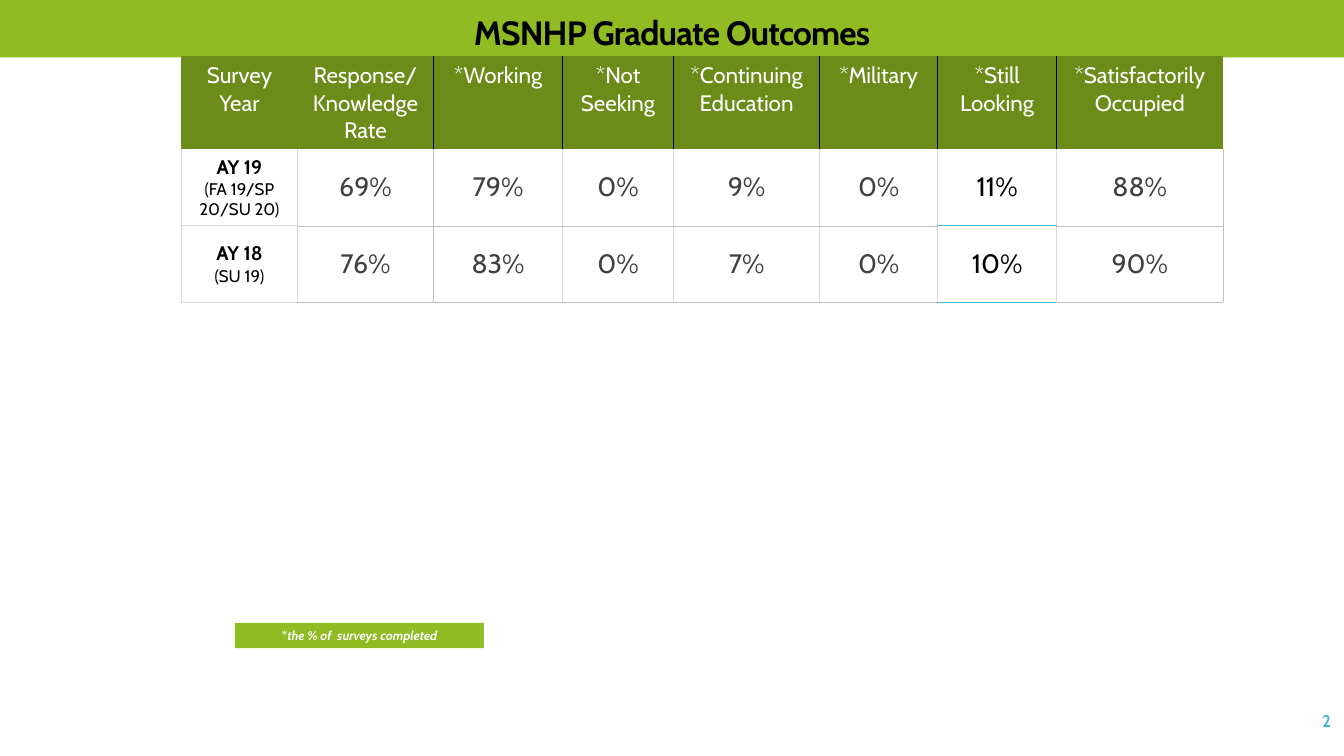
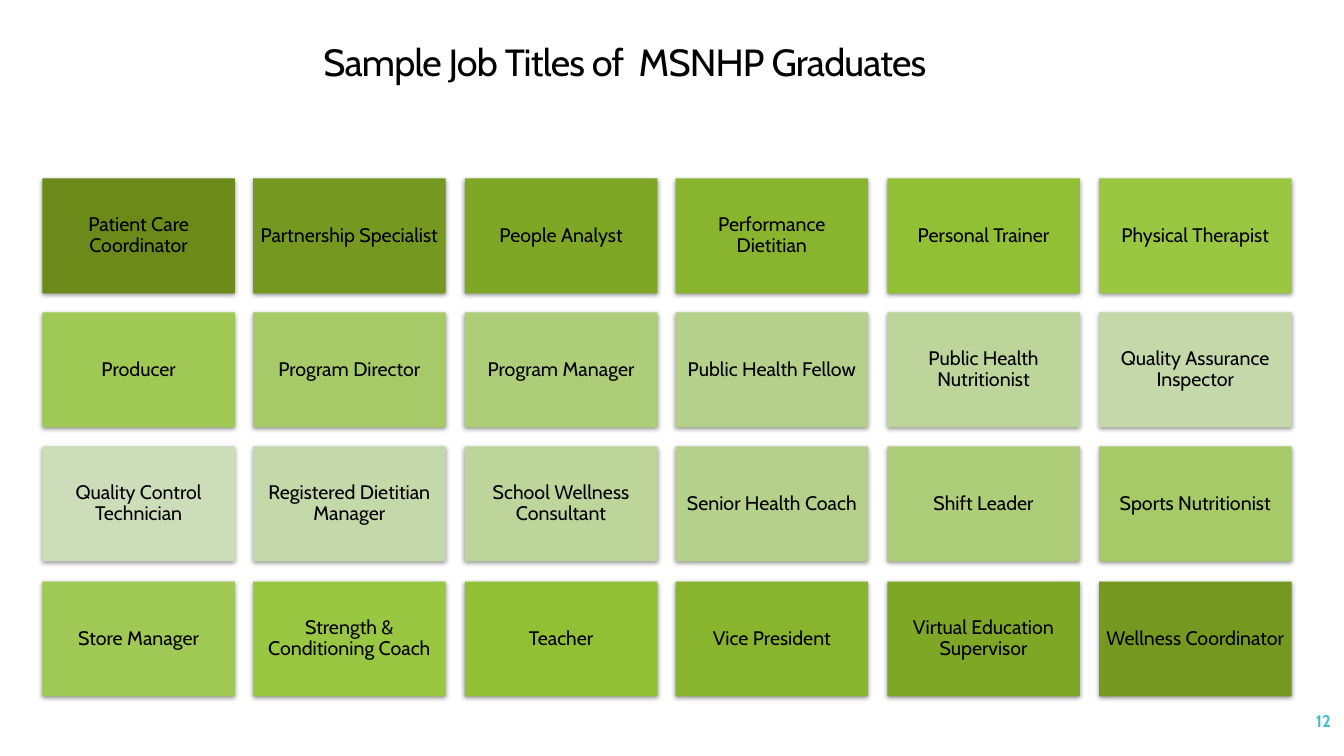
"""Build two slides on graduate outcomes and job titles."""
from lxml.etree import SubElement as Sub
from pptx import Presentation
from pptx.dml.color import RGBColor as Rgb
from pptx.enum.shapes import MSO_SHAPE as Form
from pptx.enum.text import MSO_ANCHOR as Anchor, PP_ALIGN as Align
from pptx.oxml.ns import qn
from pptx.util import Pt

SCALE = 9144
FONT = "Cabin"
INK = {
    "black": "000000", "white": "FFFFFF", "green": "90BB23",
    "head": "6C8C1A", "grey": "404040", "pale": "D9D9D9",
    "mid": "BFBFBF", "blue": "40BAD2",
}
SHADES = [
    "6B8A1A", "759920", "7FA726", "89B42D", "92C035", "9AC742", "A0C855",
    "A6CA67", "ADCD79", "B5D08A", "BDD49A", "C5D8AA", "CEDDB9",
]
WIDTHS = [115, 135, 128, 110, 145, 117, 118, 165]
HEIGHTS = [92, 76, 76]
HEADS = [
    ["Survey Year"], ["Response/", "Knowledge", "Rate"], ["*Working"],
    ["*Not Seeking"], ["*Continuing Education"], ["*Military"],
    ["*Still Looking"], ["*Satisfactorily", "Occupied"],
]
YEARS = [
    ("AY 19", "(FA 19/SP 20/SU 20)",
     ["69%", "79%", "0%", "9%", "0%", "11%", "88%"]),
    ("AY 18", "(SU 19)",
     ["76%", "83%", "0%", "7%", "0%", "10%", "90%"]),
]
STILL = 6
JOBS = [
    "Patient Care Coordinator", "Partnership Specialist", "People Analyst",
    "Performance Dietitian", "Personal Trainer", "Physical Therapist",
    "Producer", "Program Director", "Program Manager",
    "Public Health Fellow", "Public Health Nutritionist",
    "Quality Assurance Inspector", "Quality Control Technician",
    "Registered Dietitian Manager", "School Wellness Consultant",
    "Senior Health Coach", "Shift Leader", "Sports Nutritionist",
    "Store Manager", "Strength & Conditioning Coach", "Teacher",
    "Vice President", "Virtual Education Supervisor", "Wellness Coordinator",
]


def px(*nums):
    """Turn px into EMU."""
    return [num * SCALE for num in nums]


def tint(fill, code):
    """Set a solid fill."""
    fill.solid()
    fill.fore_color.rgb = Rgb.from_string(code)


def write(frame, *lines, align=Align.CENTER, lead=None, **base):
    """Fill a frame with lines, each a string or a list of (text, format)."""
    frame.word_wrap = True
    for at, line in enumerate(lines):
        para = frame.add_paragraph() if at else frame.paragraphs[0]
        para.alignment = align
        if lead:
            para.line_spacing = lead
        for words, more in [(line, {})] if isinstance(line, str) else line:
            look = {**base, **more}
            run = para.add_run()
            run.text = words
            font = run.font
            font.name, font.size = FONT, Pt(look["size"])
            font.bold = look.get("bold", False)
            font.italic = look.get("ital", False)
            font.color.rgb = Rgb.from_string(INK[look.get("ink", "black")])
            if "track" in look:
                run._r.get_or_add_rPr().set("spc", str(look["track"]))


def block(slide, area, code):
    """Add a plain filled rectangle."""
    shape = slide.shapes.add_shape(Form.RECTANGLE, *px(*area))
    shape.shadow.inherit = False
    tint(shape.fill, code)
    shape.line.fill.background()
    return shape


def label(slide, area):
    """Add a text box and return its frame."""
    frame = slide.shapes.add_textbox(*px(*area)).text_frame
    frame.vertical_anchor = Anchor.MIDDLE
    return frame


def title(frame, words, size, bold=False):
    """Write a slide title."""
    write(frame, words, size=size, bold=bold, lead=0.9, track=-60)


def page(deck, num):
    """Add a blank slide with its number."""
    slide = deck.slides.add_slide(deck.slide_layouts[6])
    write(label(slide, (1163, 695, 167, 40)), num, align=Align.RIGHT,
          size=12, ink="blue", bold=True)
    return slide


def shade(shape):
    """Give a shape a soft drop shadow."""
    props = shape._element.spPr
    glow = Sub(props.find(qn("a:effectLst")), qn("a:outerShdw"),
               blurRad=str(Pt(3.5)), dist=str(Pt(1.1)), dir="5400000",
               algn="ctr", rotWithShape="0")
    tone = Sub(glow, qn("a:srgbClr"), val=INK["black"])
    Sub(tone, qn("a:alpha"), val="45000")


def edge(cell, **sides):
    """Draw the sides L, R, T and B of a cell, each an ink and a width."""
    props = cell._tc.get_or_add_tcPr()
    for side in "LRTB":
        ink, wide = sides.get(side) or (None, 0)
        line = Sub(props, qn("a:ln" + side), w=str(Pt(wide)))
        if ink:
            fill = Sub(line, qn("a:solidFill"))
            Sub(fill, qn("a:srgbClr"), val=INK[ink])
        else:
            Sub(line, qn("a:noFill"))


def wall(row, col):
    """Give the upright line to the left of a column."""
    if row == 0:
        return ("black", 1) if 2 <= col < len(WIDTHS) else None
    return ("mid", 0.25) if col in (2, len(WIDTHS)) else ("pale", 1)


def floor(row, col):
    """Give the level line under a row."""
    if row == 0:
        return None
    return {0: ("pale", 1), STILL: ("blue", 1)}.get(col, ("mid", 0.25))


def fill_cell(cell, row, col):
    """Write and style one table cell."""
    edge(cell, L=wall(row, col), R=wall(row, col + 1),
         T=floor(row - 1, col) if row else None, B=floor(row, col))
    tint(cell.fill, INK["white" if row else "head"])
    cell.margin_left, cell.margin_right = px(12, 12)
    cell.margin_top, cell.margin_bottom = px(6, 6)
    cell.vertical_anchor = Anchor.MIDDLE if row else Anchor.TOP
    frame = cell.text_frame
    if row == 0:
        write(frame, *HEADS[col], size=16, ink="white")
        return
    year, term, rates = YEARS[row - 1]
    if col == 0:
        write(frame, [(year, {"size": 14, "bold": True})], term, size=12)
    else:
        write(frame, rates[col - 1], size=19,
              ink="black" if col == STILL else "grey")


def grid(slide):
    """Add the table of outcomes."""
    area = px(180, 56, sum(WIDTHS), sum(HEIGHTS))
    table = slide.shapes.add_table(len(HEIGHTS), len(WIDTHS), *area).table
    table.horz_banding = False
    for col, wide in zip(table.columns, px(*WIDTHS)):
        col.width = wide
    for row, tall in zip(table.rows, px(*HEIGHTS)):
        row.height = tall
    for row in range(len(HEIGHTS)):
        for col in range(len(WIDTHS)):
            fill_cell(table.cell(row, col), row, col)


def results(deck):
    """Build the slide of outcomes."""
    slide = page(deck, "2")
    band = block(slide, (0, 0, 1333, 57), INK["green"]).text_frame
    band.vertical_anchor = Anchor.BOTTOM
    title(band, "MSNHP Graduate Outcomes", 24, bold=True)
    grid(slide)
    note = block(slide, (233, 618, 247, 25), INK["green"]).text_frame
    note.vertical_anchor = Anchor.TOP
    write(note, [("*", {}), ("the % of  surveys completed", {"ital": True})],
          size=9, ink="white", bold=True)


def jobs(deck):
    """Build the slide of job titles."""
    slide = page(deck, "12")
    title(label(slide, (0, 40, 1239, 47)),
          "Sample Job Titles of  MSNHP Graduates", 27)
    peak = len(SHADES) - 1
    for at, job in enumerate(JOBS):
        row, col = divmod(at, 6)
        area = (42 + col * 1048 // 5, 177 + row * 400 // 3, 191, 114)
        tile = block(slide, area, SHADES[peak - abs(peak - at)])
        shade(tile)
        frame = tile.text_frame
        frame.vertical_anchor = Anchor.MIDDLE
        frame.margin_left, frame.margin_right = px(6, 6)
        frame.margin_top, frame.margin_bottom = px(6, 6)
        write(frame, job, size=14, lead=0.9)


def main():
    """Build and save the deck."""
    deck = Presentation()
    deck.slide_width, deck.slide_height = px(1333, 750)
    results(deck)
    jobs(deck)
    deck.save("out.pptx")


if __name__ == "__main__":
    main()
